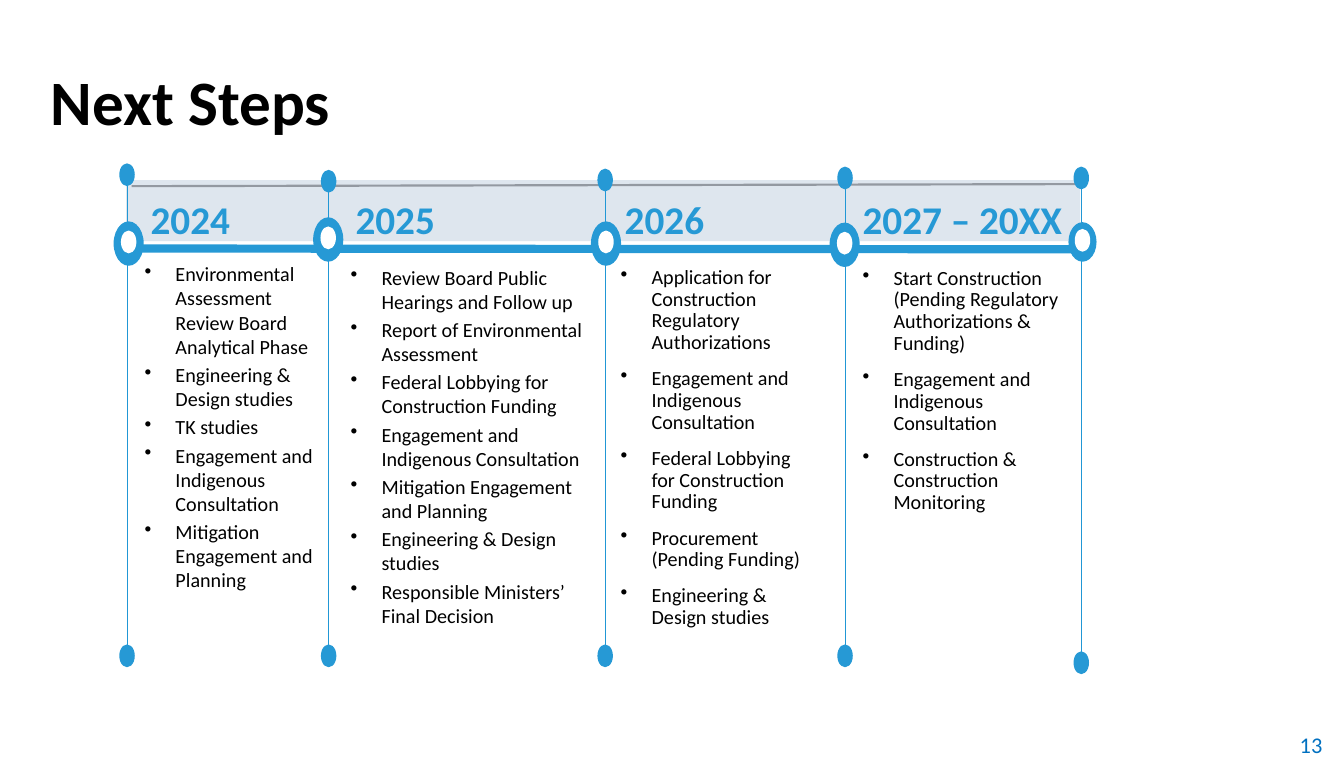
"""Build the Next Steps timeline slide."""
import pptx
import pptx.util
import pptx.dml.color
import pptx.enum.shapes
import pptx.enum.text
import pptx.oxml
import pptx.oxml.ns
from dataclasses import dataclass

TITLE = "Next Steps"
PAGE = "13"
STEPS = [
    ("2024", [
        "Environmental Assessment Review Board Analytical Phase",
        "Engineering & Design studies",
        "TK studies",
        "Engagement and Indigenous Consultation",
        "Mitigation Engagement and Planning",
    ]),
    ("2025", [
        "Review Board Public Hearings and Follow up",
        "Report of Environmental Assessment",
        "Federal Lobbying for Construction Funding",
        "Engagement and Indigenous Consultation",
        "Mitigation Engagement and Planning",
        "Engineering & Design studies",
        "Responsible Ministers’ Final Decision",
    ]),
    ("2026", [
        "Application for Construction Regulatory Authorizations",
        "Engagement and Indigenous Consultation",
        "Federal Lobbying for Construction Funding",
        "Procurement (Pending Funding)",
        "Engineering & Design studies",
    ]),
    ("2027 – 20XX", [
        "Start Construction (Pending Regulatory Authorizations & Funding)",
        "Engagement and Indigenous Consultation",
        "Construction & Construction Monitoring",
    ]),
]
# year left, year width, list left, list top, list width, line spacing, gap in points
COLS = [
    (3.45, 4.75, 3.3, 6.3, 4.75, 1.0, 2.8),
    (8.48, 4.75, 8.36, 6.38, 6.53, 1.0, 2.8),
    (15.09, 4.75, 14.99, 6.43, 5.26, 0.9, 10),
    (20.93, 6.22, 20.93, 6.45, 5.54, 0.9, 10),
]
# post x, top dot y, ring x, ring y, foot dot y, ring size
POSTS = [
    (3.12, 4.29, 3.16, 5.98, 16.1, (0.74, 1.09)),
    (8.07, 4.45, 8.06, 5.88, 16.1, (0.74, 1.09)),
    (14.86, 4.42, 14.88, 5.98, 16.1, (0.74, 1.09)),
    (20.75, 4.37, 20.74, 6.01, 16.1, (0.74, 1.09)),
    (26.55, 4.37, 26.58, 5.94, 16.27, (0.69, 0.97)),
]
DOT = (0.38, 0.56)
INDENT = 0.76


@dataclass(frozen=True)
class Theme:
    """Colours, font and type sizes."""
    face: str = "Calibri"
    ink: str = "000000"
    blue: str = "2699D5"
    post: str = "2197D5"
    band: str = "DEE6EE"
    rule: str = "9399A1"
    page: str = "0070C0"
    white: str = "FFFFFF"
    head: float = 44
    year: float = 27.3
    body: float = 14
    num: float = 15.6


LOOK = Theme()
Cm, Pt = pptx.util.Cm, pptx.util.Pt
Align, Anchor = pptx.enum.text.PP_ALIGN, pptx.enum.text.MSO_ANCHOR
Kind = pptx.enum.shapes.MSO_SHAPE


def rgb(code):
    """Turn a hex code into a colour."""
    return pptx.dml.color.RGBColor.from_string(code)


def put(item, values):
    """Set attributes from a dict."""
    for key, value in values.items():
        setattr(item, key, value)


def write(para, text, size, color, bold=False):
    """Add one styled run."""
    run = para.add_run()
    run.text = text
    put(run.font, {"name": LOOK.face, "size": Pt(size), "bold": bold})
    run.font.color.rgb = rgb(color)


def text_box(slide, box, **values):
    """Add a wrapping text box and return its frame."""
    frame = slide.shapes.add_textbox(*map(Cm, box)).text_frame
    put(frame, {"word_wrap": True, **values})
    return frame


def bullets(frame, items, line, gap):
    """Fill a frame with a bulleted list."""
    for i, item in enumerate(items):
        para = frame.add_paragraph() if i else frame.paragraphs[0]
        props = para._p.get_or_add_pPr()
        put_at = {"marL": Cm(INDENT), "indent": -Cm(INDENT)}
        for key, value in put_at.items():
            props.set(key, str(int(value)))
        mark = pptx.oxml.parse_xml(
            f'<a:buChar {pptx.oxml.ns.nsdecls("a")} char="•"/>')
        props.append(mark)
        put(para, {"line_spacing": line, "space_before": Pt(gap if i else 0)})
        write(para, item, LOOK.body, LOOK.ink)


def shape(slide, kind, box, color):
    """Add a flat filled shape."""
    item = slide.shapes.add_shape(kind, *map(Cm, box))
    item.shadow.inherit = False
    item.fill.solid()
    item.fill.fore_color.rgb = rgb(color)
    item.line.fill.background()


def oval(slide, x, y, size, color):
    """Add an ellipse around a centre."""
    wide, high = size
    box = (x - wide / 2, y - high / 2, wide, high)
    shape(slide, Kind.OVAL, box, color)


def rule(slide, ends, color, width):
    """Add a straight line."""
    straight = pptx.enum.shapes.MSO_CONNECTOR.STRAIGHT
    item = slide.shapes.add_connector(straight, *map(Cm, ends))
    item.line.color.rgb = rgb(color)
    item.line.width = Pt(width)
    item._element.spPr.append(
        pptx.oxml.parse_xml(f'<a:effectLst {pptx.oxml.ns.nsdecls("a")}/>'))


def main():
    """Build and save the slide."""
    deck = pptx.Presentation()
    put(deck, {"slide_width": Cm(33), "slide_height": Cm(19)})
    slide = deck.slides.add_slide(deck.slide_layouts[5])

    title = slide.shapes.title
    put(title, {"left": Cm(0.99), "top": Cm(0.86),
                "width": Cm(29.69), "height": Cm(3.18)})
    title.text_frame.vertical_anchor = Anchor.MIDDLE
    para = title.text_frame.paragraphs[0]
    para.alignment = Align.LEFT
    write(para, TITLE, LOOK.head, LOOK.ink, True)

    frame = text_box(slide, (25.02, 17.78, 7.7, 1.02),
                     vertical_anchor=Anchor.MIDDLE)
    frame.paragraphs[0].alignment = Align.RIGHT
    write(frame.paragraphs[0], PAGE, LOOK.num, LOOK.page)

    shape(slide, Kind.RECTANGLE, (3.1, 4.42, 23.42, 1.5), LOOK.band)
    fit = pptx.enum.text.MSO_AUTO_SIZE.SHAPE_TO_FIT_TEXT
    for (year, items), col in zip(STEPS, COLS):
        left, wide, x, y, width, line, gap = col
        frame = text_box(slide, (left, 4.67, wide, 1.85))
        write(frame.paragraphs[0], year, LOOK.year, LOOK.blue, True)
        frame = text_box(slide, (x, y, width, 1.5), auto_size=fit)
        bullets(frame, items, line, gap)

    rule(slide, (3.23, 4.57, 26.55, 4.52), LOOK.rule, 1.5)
    rule(slide, (2.92, 6.1, 26.8, 6.12), LOOK.blue, 5.7)
    for x, top, mid, y, foot, size in POSTS:
        rule(slide, (x, top, x, foot), LOOK.post, 0.75)
        for end in (top, foot):
            oval(slide, x, end, DOT, LOOK.blue)
        oval(slide, mid, y, size, LOOK.blue)
        oval(slide, mid, y - 0.04, DOT, LOOK.white)

    deck.save("out.pptx")


if __name__ == "__main__":
    main()
